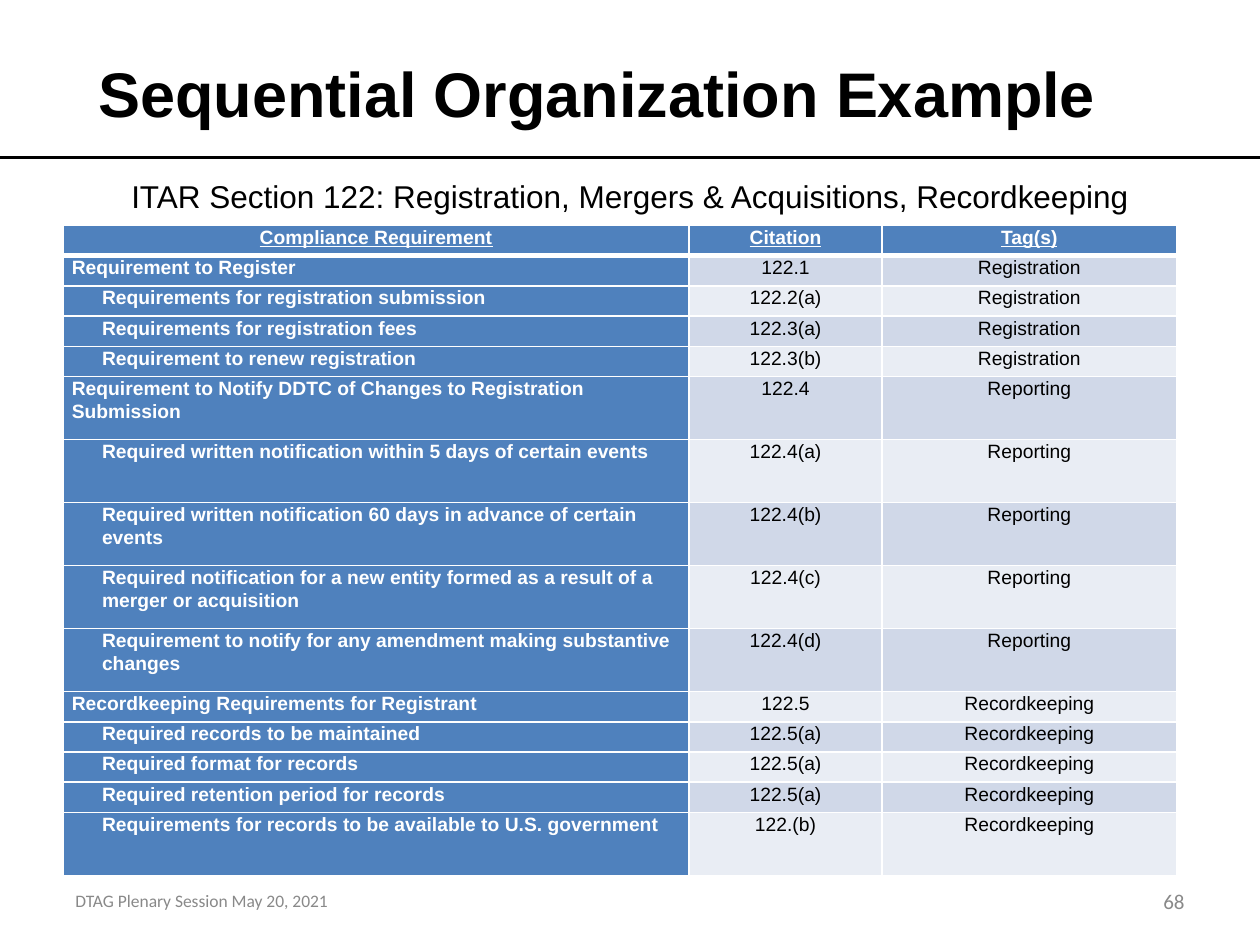
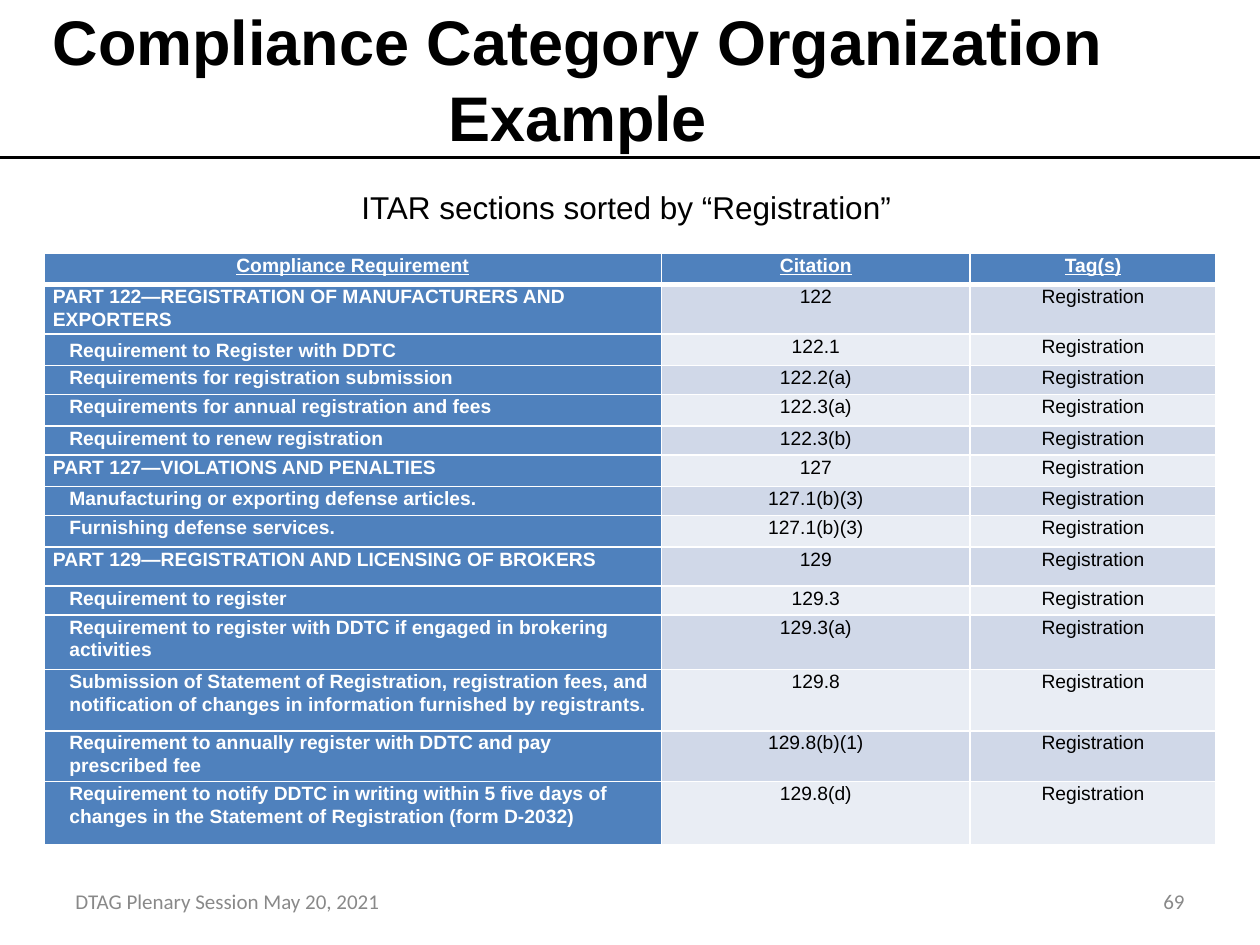
"""Build two slides that list registration requirements in tables."""
import pptx
import pptx.dml.color
import pptx.enum.shapes
import pptx.enum.text
import pptx.oxml
import pptx.oxml.ns
import pptx.util

RGBColor = pptx.dml.color.RGBColor
Align = pptx.enum.text.PP_ALIGN
Anchor = pptx.enum.text.MSO_ANCHOR

BLACK = RGBColor(0x00, 0x00, 0x00)
WHITE = RGBColor(0xFF, 0xFF, 0xFF)
GREY = RGBColor(0x89, 0x89, 0x89)
BLUE = RGBColor(0x4F, 0x81, 0xBD)
BANDS = RGBColor(0xD0, 0xD8, 0xE8), RGBColor(0xE9, 0xED, 0xF4)

COLUMNS = 100
HEADINGS = "Compliance Requirement", "Citation", "Tag(s)"
FOOTER = "DTAG Plenary Session May 20, 2021"

SHORT, TALL = 2.4, 5
SEQUENTIAL = [
    (SHORT, 0, "Requirement to Register", "122.1", "Registration"),
    (SHORT, 1, "Requirements for registration submission", "122.2(a)", "Registration"),
    (SHORT, 1, "Requirements for registration fees", "122.3(a)", "Registration"),
    (SHORT, 1, "Requirement to renew registration", "122.3(b)", "Registration"),
    (TALL, 0, "Requirement to Notify DDTC of Changes to Registration Submission",
     "122.4", "Reporting"),
    (TALL, 1, "Required written notification within 5 days of certain events",
     "122.4(a)", "Reporting"),
    (TALL, 1, "Required written notification 60 days in advance of certain events",
     "122.4(b)", "Reporting"),
    (TALL, 1, "Required notification for a new entity formed as a result of a "
     "merger or acquisition", "122.4(c)", "Reporting"),
    (TALL, 1, "Requirement to notify for any amendment making substantive changes",
     "122.4(d)", "Reporting"),
    (SHORT, 0, "Recordkeeping Requirements for Registrant", "122.5", "Recordkeeping"),
    (SHORT, 1, "Required records to be maintained", "122.5(a)", "Recordkeeping"),
    (SHORT, 1, "Required format for records", "122.5(a)", "Recordkeeping"),
    (SHORT, 1, "Required retention period for records", "122.5(a)", "Recordkeeping"),
    (TALL, 1, "Requirements for records to be available to U.S. government",
     "122.(b)", "Recordkeeping"),
]
BY_CATEGORY = [row + ("Registration",) for row in [
    (2.9, 0, "PART 122—REGISTRATION OF MANUFACTURERS AND EXPORTERS", "122"),
    (2.5, 1, "Requirement to Register with DDTC", "122.1"),
    (2.3, 1, "Requirements for registration submission", "122.2(a)"),
    (2.5, 1, "Requirements for annual registration and fees", "122.3(a)"),
    (2.3, 1, "Requirement to renew registration", "122.3(b)"),
    (2.5, 0, "PART 127—VIOLATIONS AND PENALTIES", "127"),
    (2.3, 1, "Manufacturing or exporting defense articles.", "127.1(b)(3)"),
    (2.5, 1, "Furnishing defense services.", "127.1(b)(3)"),
    (3.1, 0, "PART 129—REGISTRATION AND LICENSING OF BROKERS", "129"),
    (2.3, 1, "Requirement to register", "129.3"),
    (4.3, 1, "Requirement to register with DDTC if engaged in brokering activities",
     "129.3(a)"),
    (4.9, 1, "Submission of Statement of Registration, registration fees, and "
     "notification of changes in information furnished by registrants.", "129.8"),
    (4, 1, "Requirement to annually register with DDTC and pay prescribed fee",
     "129.8(b)(1)"),
    (5, 1, "Requirement to notify DDTC in writing within 5 five days of changes in "
     "the Statement of Registration (form D-2032)", "129.8(d)"),
]]


class SlideBuilder:
    """Hold the shared style and the current slide on a grid of square units."""

    def __init__(self):
        self.deck = pptx.Presentation()
        self.deck.slide_width = pptx.util.Inches(10)
        self.deck.slide_height = pptx.util.Inches(7.5)
        self.page = None

    def units(self, *counts):
        """Turn grid units into lengths."""
        return [round(self.deck.slide_width * count / COLUMNS) for count in counts]

    def new_page(self, title, title_place, number, footer_width, footer_size):
        """Start a slide with its title, rule, footer and number."""
        self.page = self.deck.slides.add_slide(self.deck.slide_layouts[6])
        self.rule(12.5)
        self.text(number, (71.7, 69.5, 23.3, 4), 12, "Calibri", GREY,
                  Align.RIGHT, Anchor.MIDDLE)
        self.text(title, title_place, 36, bold=True, anchor=Anchor.MIDDLE)
        self.text(FOOTER, (5, 69.5, footer_width, 4), footer_size, "Calibri", GREY,
                  Align.LEFT, Anchor.MIDDLE)

    def rule(self, top):
        """Draw a black line across the slide."""
        line = self.page.shapes.add_connector(
            pptx.enum.shapes.MSO_CONNECTOR.STRAIGHT, *self.units(0, top, COLUMNS, top))
        line.line.color.rgb = BLACK
        line.line.width = pptx.util.Pt(2)
        effects = pptx.oxml.parse_xml(
            f"<a:effectLst {pptx.oxml.ns.nsdecls('a')}/>")
        line._element.spPr.append(effects)

    def text(self, words, place, size, font="Arial", color=BLACK,
             align=Align.CENTER, anchor=Anchor.TOP, bold=False):
        """Place one paragraph in a text box."""
        box = self.page.shapes.add_textbox(*self.units(*place))
        box.text_frame.word_wrap = True
        box.text_frame.vertical_anchor = anchor
        self.paragraph(box.text_frame, words, size, font, color, align, bold)

    def paragraph(self, frame, words, size, font, color, align, bold):
        """Fill a frame with one styled paragraph and return it."""
        paragraph = frame.paragraphs[0]
        paragraph.text = words
        paragraph.alignment = align
        paragraph.font.size = pptx.util.Pt(size)
        paragraph.font.name = font
        paragraph.font.color.rgb = color
        paragraph.font.bold = bold
        return paragraph

    def table(self, left, top, widths, header_height, rows, indent, middle_row=None):
        """Add a requirements table with a blue header row and first column."""
        heights = [header_height] + [row[0] for row in rows]
        place = self.units(left, top, sum(widths), sum(heights))
        table = self.page.shapes.add_table(len(heights), len(widths), *place).table
        table.horz_banding = False
        for column, width in zip(table.columns, self.units(*widths)):
            column.width = width
        for line, height in zip(table.rows, self.units(*heights)):
            line.height = height
        for index, (_, level, *words) in enumerate([(0, 0, *HEADINGS)] + rows):
            for column, entry in enumerate(words):
                cell = table.cell(index, column)
                inset = indent if level and column == 0 else 0.7
                self.cell(cell, entry, index, column, inset)
        if middle_row:
            table.cell(middle_row, 0).vertical_anchor = Anchor.MIDDLE

    def cell(self, cell, words, index, column, inset):
        """Style one cell by its row and column."""
        header = index == 0
        strong = header or column == 0
        cell.margin_left, cell.margin_right = self.units(inset, 0.7)
        cell.margin_top = cell.margin_bottom = 0
        self.borders(cell, top=3 if index == 1 else 1, bottom=3 if header else 1)
        cell.fill.solid()
        cell.fill.fore_color.rgb = BLUE if strong else BANDS[(index - 1) % 2]
        align = Align.CENTER if header or column else Align.LEFT
        paragraph = self.paragraph(cell.text_frame, words, 11, "Arial",
                                   WHITE if strong else BLACK, align, strong)
        paragraph.line_spacing = 1.07
        paragraph.font.underline = header

    def borders(self, cell, top, bottom):
        """Give a cell white borders, widths in points."""
        properties = cell._tc.get_or_add_tcPr()
        for side, width in zip("LRTB", (1, 1, top, bottom)):
            properties.append(pptx.oxml.parse_xml(
                f'<a:ln{side} {pptx.oxml.ns.nsdecls("a")} w="{pptx.util.Pt(width)}">'
                f'<a:solidFill><a:srgbClr val="{WHITE}"/></a:solidFill></a:ln{side}>'))


def main():
    """Build both slides and save the deck."""
    builder = SlideBuilder()

    builder.new_page("Sequential Organization Example", (2.7, 4.3, 89.4, 6),
                     "68", 23.3, 10)
    builder.table(5, 17.9, (49.7, 15.3, 23.4), SHORT, SEQUENTIAL, indent=3.1)
    builder.text("ITAR Section 122: Registration, Mergers & Acquisitions, Recordkeeping",
                 (0.3, 13.6, 99.4, 4), 18)

    builder.new_page("Compliance Category Organization Example", (2.5, 0.6, 86.7, 11.2),
                     "69", 26.5, 12)
    builder.text("ITAR sections sorted by “Registration”", (5, 14.4, 89.4, 4), 18)
    builder.table(3.5, 20.1, (49, 24.5, 19.5), 2.5, BY_CATEGORY, indent=2, middle_row=2)

    builder.deck.save("out.pptx")


if __name__ == "__main__":
    main()
